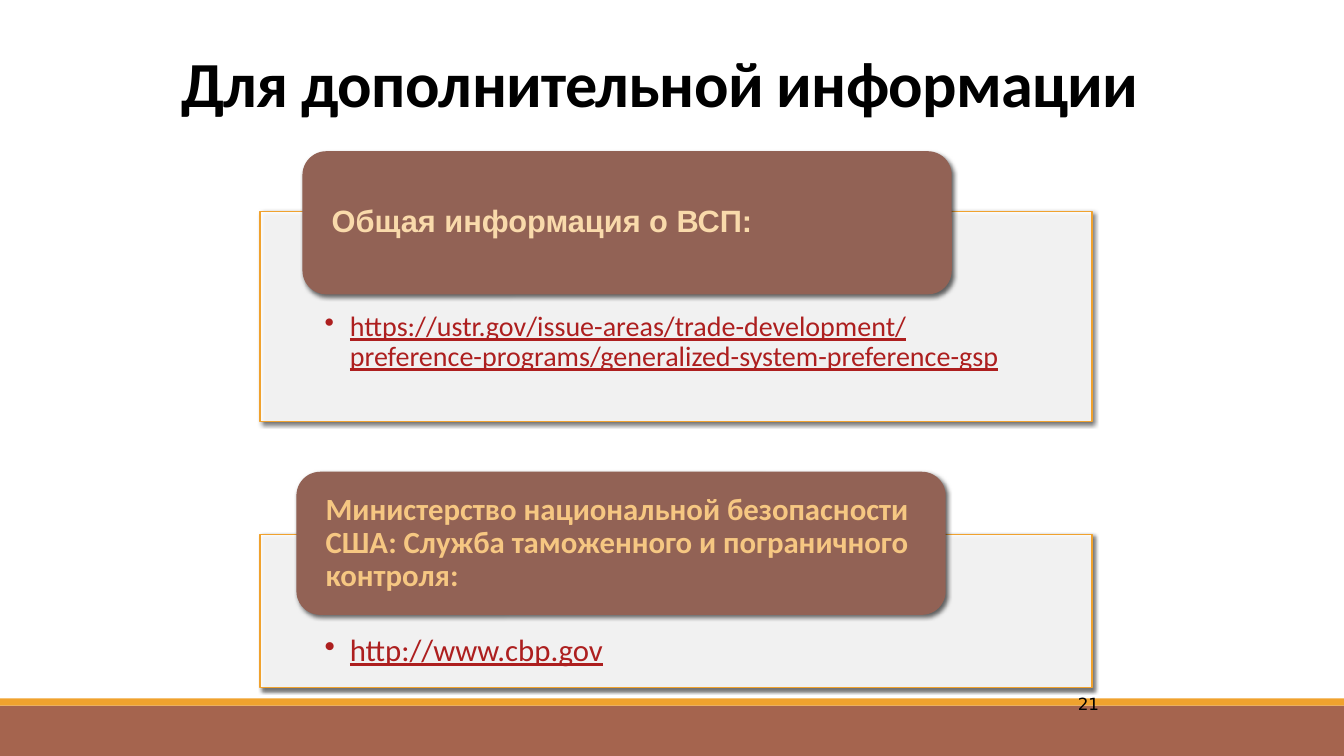
import pptx
import pptx.util
import pptx.dml.color
import pptx.enum.shapes
import pptx.enum.text
from lxml import etree

Inches = pptx.util.Inches
Pt = pptx.util.Pt
RGB = pptx.dml.color.RGBColor
SHAPE = pptx.enum.shapes.MSO_SHAPE
ANCHOR = pptx.enum.text.MSO_ANCHOR
ALIGN = pptx.enum.text.PP_ALIGN

BLACK = RGB(0, 0, 0)
WHITE = RGB(255, 255, 255)
BROWN = RGB(0xA5, 0x64, 0x4E)
ORANGE = RGB(0xF0, 0xA2, 0x2E)
COCOA = RGB(0x92, 0x62, 0x55)
CREAM = RGB(0xF9, 0xDA, 0xAB)
SAND = RGB(0xF6, 0xC7, 0x82)
RED = RGB(0xAD, 0x1F, 0x1F)
NS = "http://schemas.openxmlformats.org/drawingml/2006/main"

deck = pptx.Presentation()
deck.slide_width = Inches(13.33)
deck.slide_height = Inches(7.5)
slide = deck.slides.add_slide(deck.slide_layouts[6])


def draw(kind, box, fill, line=None, blur=0, alpha=100):
    """Add a filled shape; blur, in points, gives it a soft shadow."""
    shape = slide.shapes.add_shape(kind, *map(Inches, box))
    shape.shadow.inherit = False
    shape.fill.solid()
    shape.fill.fore_color.rgb = fill
    if line is None:
        shape.line.fill.background()
    else:
        shape.line.color.rgb = line
        shape.line.width = Pt(1)
    props = shape.fill._xPr
    if alpha < 100:
        color = props.find(f"{{{NS}}}solidFill")[0]
        etree.SubElement(color, f"{{{NS}}}alpha", val=str(alpha * 1000))
    if blur:
        props.find(f"{{{NS}}}effectLst").append(etree.fromstring(
            f'<a:outerShdw xmlns:a="{NS}" blurRad="{Pt(blur)}" dist="{Pt(2)}" '
            'dir="2700000" algn="tl" rotWithShape="0"><a:srgbClr val="000000">'
            '<a:alpha val="60000"/></a:srgbClr></a:outerShdw>'))


def write(text, box, size, color, font="Calibri", bold=False, align=ALIGN.LEFT,
          anchor=ANCHOR.TOP, inset=(0.1, 0.05, 0.1, 0.05), lead=None,
          track=0, link=False):
    """Add a text box; link makes it an underlined bullet."""
    frame = slide.shapes.add_textbox(*map(Inches, box)).text_frame
    frame.word_wrap = True
    frame.vertical_anchor = anchor
    (frame.margin_left, frame.margin_top,
     frame.margin_right, frame.margin_bottom) = map(Inches, inset)
    para = frame.paragraphs[0]
    para.alignment = align
    para.line_spacing = lead
    run = para.add_run()
    run.text = text
    run.font.name = font
    run.font.size = Pt(size)
    run.font.bold = bold
    run.font.underline = link
    run.font.color.rgb = color
    if track:
        run.font._element.set("spc", str(track))
    if link:
        props = para._p.get_or_add_pPr()
        props.set("marL", str(Inches(0.25)))
        props.set("indent", str(-Inches(0.25)))
        etree.SubElement(props, f"{{{NS}}}buChar", char="•")


# Footer bands and heading
draw(SHAPE.RECTANGLE, (0, 7, 13.33, 0.5), BROWN)
draw(SHAPE.RECTANGLE, (0, 6.93, 13.33, 0.07), ORANGE)
write("21", (8.83, 6.83, 2.17, 0.52), 12, BLACK, font="DejaVu Sans",
      align=ALIGN.RIGHT)
write("Для дополнительной информации", (1.7, 0, 10, 1.25), 45.9, BLACK,
      bold=True, anchor=ANCHOR.BOTTOM, lead=0.85, track=-50)

# Panel top and height, tab left and top, then the texts
cards = [
    (2.1, 2.08, 3, 1.5, "Общая информация о ВСП:", "Arial", CREAM,
     "https://ustr.gov/issue-areas/trade-development/"
     "preference-programs/generalized-system-preference-gsp", 20),
    (5.3, 1.52, 2.94, 4.68,
     "Министерство национальной безопасности США: "
     "Служба таможенного и пограничного контроля:", "Calibri", SAND,
     "http://www.cbp.gov", 22),
]
PAD = 0.07
DROP = 1  # from the panel's top down to its link
for top, high, left, tab, head, font, color, link, size in cards:
    draw(SHAPE.RECTANGLE, (2.58, top, 8.25, high), WHITE, line=ORANGE,
         blur=3, alpha=90)
    write(link, (2.58, top + DROP, 8.25, high - DROP), size, RED,
          inset=(0.64, 0, 0.64, 0), lead=0.9, link=True)
    draw(SHAPE.ROUNDED_RECTANGLE, (left, tab, 6.44, 1.42), COCOA, blur=3.5)
    write(head, (left + PAD, tab + PAD, 6.44 - 2 * PAD, 1.42 - 2 * PAD), 22,
          color, font=font, bold=True, anchor=ANCHOR.MIDDLE,
          inset=(0.22, 0, 0.22, 0), lead=0.9)

deck.save("out.pptx")
